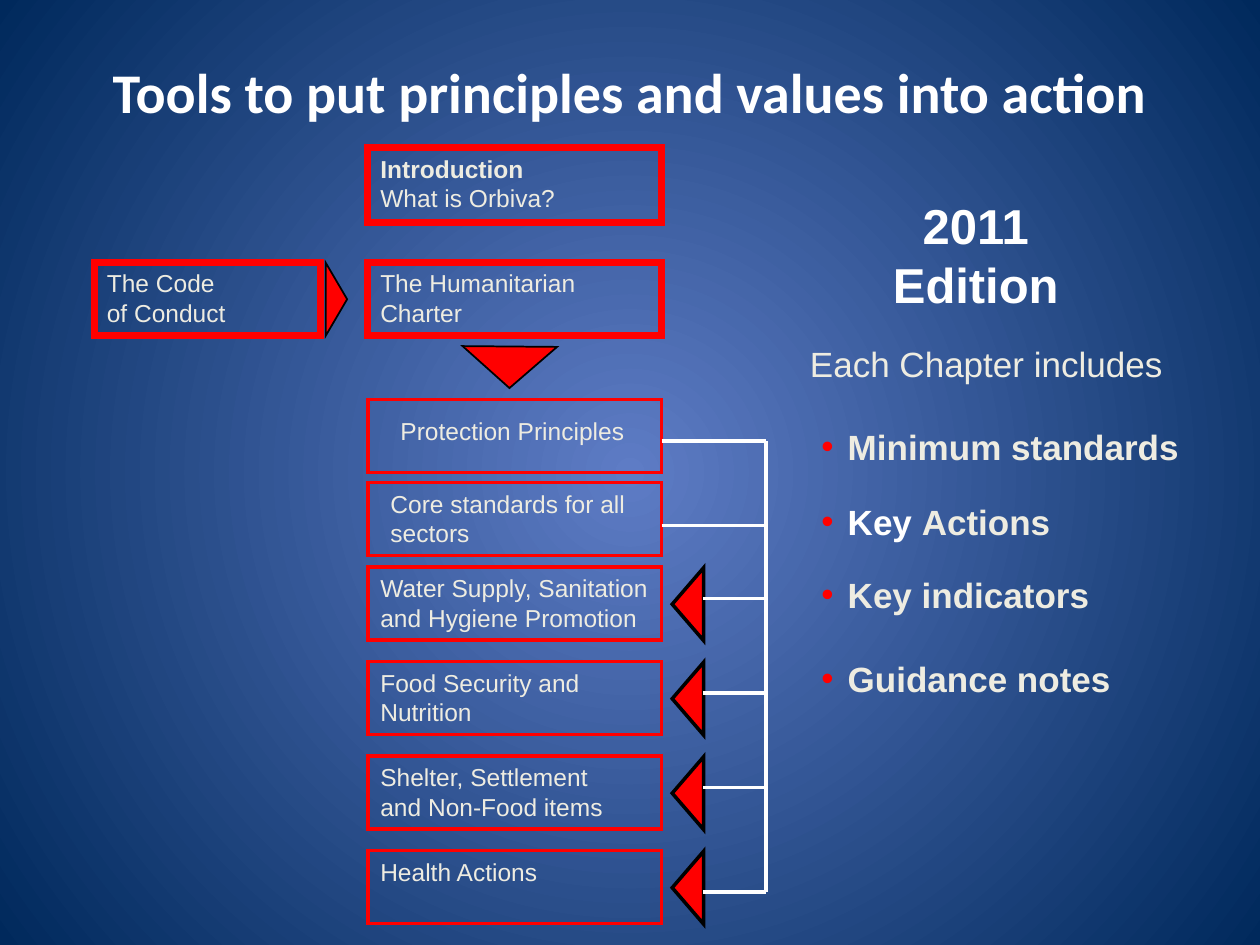
"""Build the slide on tools that put principles and values into action."""
from lxml.etree import SubElement as Sub
from pptx import Presentation
from pptx.dml.color import RGBColor
from pptx.enum.shapes import MSO_CONNECTOR as Link, MSO_SHAPE as Shape
from pptx.enum.text import MSO_ANCHOR as Anchor, PP_ALIGN as Align
from pptx.oxml.ns import qn
from pptx.util import Inches, Pt

RED, WHITE, BLACK, CREAM = "FF0000", "FFFFFF", "000000", "EEECE1"
LEFT, WIDE, HIGH = 2.92, 2.33, 0.58
RIGHT, TRUNK = LEFT + WIDE, 6.08


def paint(color, code):
    """Set a colour from a hex string."""
    color.rgb = RGBColor.from_string(code)


def back(slide, inner, outer):
    """Fill the background with a round gradient."""
    fill = slide.background.fill
    fill.gradient()
    for stop, code in zip(fill.gradient_stops, (inner, outer)):
        paint(stop.color, code)
    grad = next(slide.element.iter(qn("a:gradFill")))
    grad.remove(grad.find(qn("a:lin")))
    ring = Sub(grad, qn("a:path"), path="circle")
    Sub(ring, qn("a:fillToRect"), l="50000", t="50000", r="50000", b="50000")


def write(slide, spot, *parts, size=14, font="Arial", color=CREAM, bold=False,
          align=Align.LEFT, top=0.05, anchor=Anchor.TOP):
    """Add a text box of strings or (string, format) parts and return its paragraph."""
    frame = slide.shapes.add_textbox(*map(Inches, spot)).text_frame
    frame.word_wrap = True
    frame.margin_top = Inches(top)
    frame.vertical_anchor = anchor
    para = frame.paragraphs[0]
    para.alignment = align
    for part in parts:
        text, look = (part, {}) if isinstance(part, str) else part
        for i, line in enumerate(text.split("\n")):
            if i:
                para.add_line_break()
            if not line:
                continue
            run = para.add_run()
            run.text = line
            run.font.name, run.font.size = font, Pt(size)
            run.font.bold = look.get("bold", bold)
            paint(run.font.color, look.get("color", color))
    return para


def bullet(slide, top, *parts):
    """Add one bold line with a red bullet."""
    para = write(slide, (6.42, top, 3.33, 0.67), *parts, size=20, bold=True)
    props = para._p.get_or_add_pPr()
    props.set("marL", str(Inches(0.21)))
    props.set("indent", str(-Inches(0.21)))
    Sub(Sub(props, qn("a:buClr")), qn("a:srgbClr"), val=RED)
    Sub(props, qn("a:buFont"), typeface="Arial")
    Sub(props, qn("a:buChar"), char="•")


def draw(slide, kind, spot, line, weight, fill=None, turn=0):
    """Add a preset shape with a sharp-cornered outline."""
    shape = slide.shapes.add_shape(kind, *map(Inches, spot))
    shape.shadow.inherit = False
    shape.rotation = turn
    if fill:
        shape.fill.solid()
        paint(shape.fill.fore_color, fill)
    else:
        shape.fill.background()
    paint(shape.line.color, line)
    shape.line.width = Pt(weight)
    Sub(shape._element.spPr.find(qn("a:ln")), qn("a:miter"), lim="800000")


def frame(slide, top, left=LEFT, width=WIDE, height=HIGH, weight=2):
    """Add a hollow red box."""
    draw(slide, Shape.RECTANGLE, (left, top, width, height), RED, weight)


def wedge(slide, spot, turn, weight=1):
    """Add a red triangle with a black outline."""
    draw(slide, Shape.ISOSCELES_TRIANGLE, spot, BLACK, weight, RED, turn)


def rule(slide, *ends):
    """Add a white line between two points."""
    line = slide.shapes.add_connector(Link.STRAIGHT, *map(Inches, ends))
    paint(line.line.color, WHITE)
    line.line.width = Pt(2)
    Sub(line._element.spPr, qn("a:effectLst"))


def chapter(slide, top, text, left, width, drop, joint, arrow):
    """Add a chapter box with its branch to the trunk line."""
    frame(slide, top)
    write(slide, (left, top + drop, width, HIGH), text)
    if arrow:
        wedge(slide, (5.17, top + 0.17, HIGH, 0.25), 270, 2)
    rule(slide, 5.58 if arrow else RIGHT, joint, TRUNK, joint)


def main():
    """Build and save the slide."""
    deck = Presentation()
    deck.slide_width, deck.slide_height = Inches(10), Inches(7.5)
    slide = deck.slides.add_slide(deck.slide_layouts[6])
    back(slide, "5E7CC5", "00295C")
    write(slide, (0.75, 0, 8.5, 1.25),
          "Tools to put principles and values into action",
          size=32, font="Calibri", color=WHITE, bold=True,
          align=Align.CENTER, top=0.24, anchor=Anchor.MIDDLE)

    write(slide, (LEFT, 1.17, 2.08, 0.74),
          ("Introduction\n", {"bold": True}), "What is Orbiva?")
    frame(slide, 1.17, height=0.6, weight=4)
    write(slide, (0.75, 2.08, 1.5, HIGH), "The Code\nof Conduct")
    frame(slide, 2.08, left=0.75, width=1.79, weight=4)
    wedge(slide, (2.38, 2.29, HIGH, 0.17), 90)
    write(slide, (LEFT, 2.08, 1.83, HIGH), "The Humanitarian Charter")
    frame(slide, 2.08, weight=4)
    wedge(slide, (3.67, 2.75, 0.75, 0.33), 180.5)

    rule(slide, TRUNK, 3.5, TRUNK, 7.08)
    for row in (
        (3.17, "Protection Principles", 3.08, 2.08, 0.08, 3.5, False),
        (3.83, "Core standards for all sectors", 3, 2.08, 0, 4.17, False),
        (4.5, "Water Supply, Sanitation and Hygiene Promotion",
         LEFT, 2.42, 0, 4.75, True),
        (5.25, "Food Security and Nutrition", LEFT, 2.25, 0, 5.5, True),
        (6, "Shelter, Settlement and Non-Food items", LEFT, 2.08, 0, 6.25, True),
        (6.75, "Health Actions", LEFT, 1.83, 0, 7.08, True),
    ):
        chapter(slide, *row)

    write(slide, (6.83, 1.5, 1.83, 1.42), "2011\nEdition",
          size=28, color=WHITE, bold=True, align=Align.CENTER)
    write(slide, (6.33, 2.67, 4, 1.25), "Each Chapter includes", size=20)
    bullet(slide, 3.33, "Minimum standards")
    bullet(slide, 3.92, ("Key ", {"color": WHITE}), "Actions")
    bullet(slide, 4.5, "Key indicators")
    bullet(slide, 5.17, "Guidance notes")
    deck.save("out.pptx")


if __name__ == "__main__":
    main()
